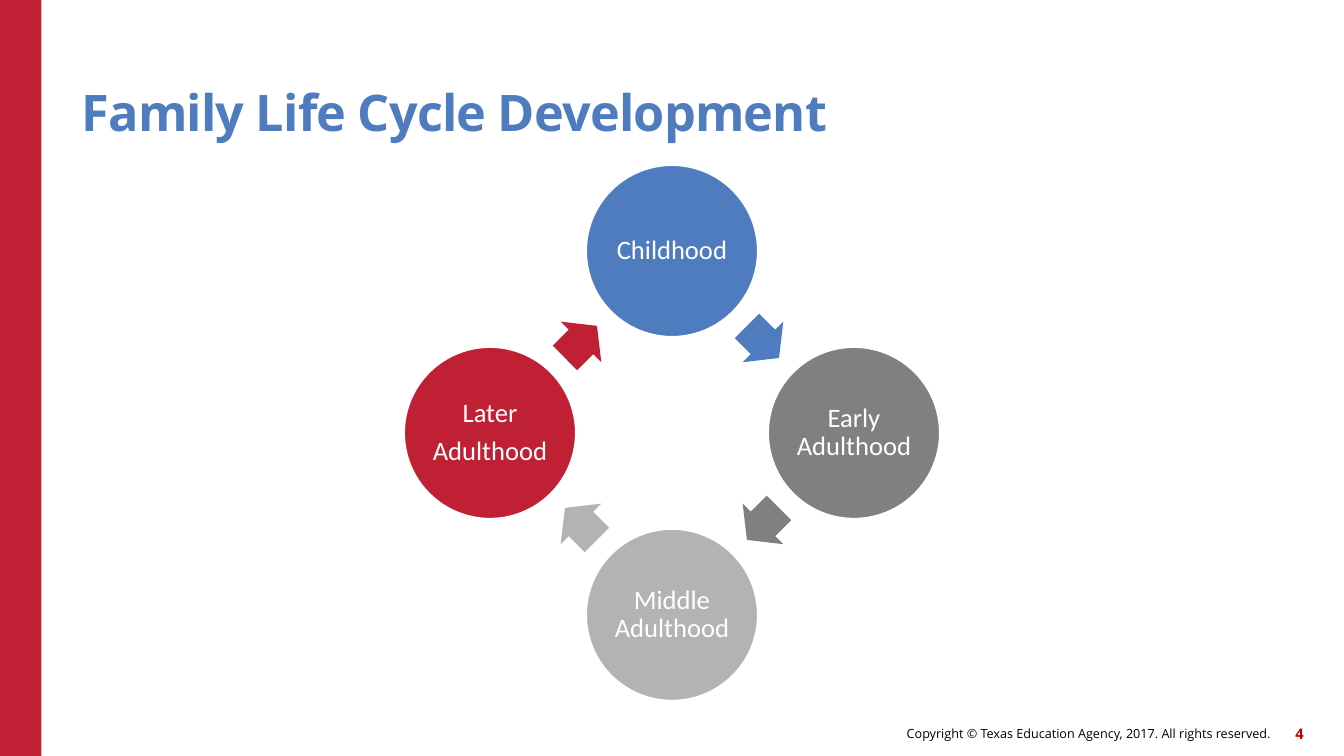
import math

import pptx
import pptx.dml.color
import pptx.enum.shapes
import pptx.enum.text
import pptx.util
from pptx.util import Inches

COLORS = {
    "red": "C02033",
    "blue": "4E7CBE",
    "gray": "808080",
    "silver": "B3B3B3",
    "white": "FFFFFF",
    "black": "000000",
    "number": "C00000",
}
STAGES = [
    ("Childhood", "blue"),
    ("Early Adulthood", "gray"),
    ("Middle Adulthood", "silver"),
    ("Later\nAdulthood", "red"),
]
ALIGN = pptx.enum.text.PP_ALIGN
ANCHOR = pptx.enum.text.MSO_ANCHOR
SHAPE = pptx.enum.shapes.MSO_SHAPE


def rgb(color):
    return pptx.dml.color.RGBColor.from_string(COLORS[color])


def write(shape, text, font_name, size, color, align, anchor, bold=False, inset=0):
    frame = shape.text_frame
    frame.word_wrap = True
    frame.vertical_anchor = anchor
    frame.margin_left = frame.margin_right = Inches(inset)
    frame.margin_top = frame.margin_bottom = Inches(inset)
    frame.text = text
    for paragraph in frame.paragraphs:
        paragraph.alignment = align
        for run in paragraph.runs:
            run.font.name = font_name
            run.font.size = pptx.util.Pt(size)
            run.font.bold = bold
            run.font.color.rgb = rgb(color)
    return frame.paragraphs


def add_filled(slide, kind, left, top, width, height, color):
    shape = slide.shapes.add_shape(
        kind, Inches(left), Inches(top), Inches(width), Inches(height))
    shape.shadow.inherit = False
    shape.fill.solid()
    shape.fill.fore_color.rgb = rgb(color)
    shape.line.fill.background()
    return shape


def add_label(slide, left, top, width, height):
    return slide.shapes.add_textbox(
        Inches(left), Inches(top), Inches(width), Inches(height))


def add_title(slide, left, top, width, height):
    title = add_label(slide, left, top, width, height)
    heading = write(title, "Family Life Cycle Development", "Open Sans", 36,
                    "blue", ALIGN.LEFT, ANCHOR.BOTTOM, bold=True)[0]
    heading.line_spacing = 0.9
    heading.runs[0]._r.get_or_add_rPr().set("spc", "-60")


def add_footer(slide, left, top, width, height):
    number_width, gap = 0.42, -0.09
    copyright_width = width - number_width - gap
    notice = add_label(slide, left, top, copyright_width, height)
    write(notice, "Copyright © Texas Education Agency, 2017. All rights reserved.",
          "Open Sans", 9, "black", ALIGN.RIGHT, ANCHOR.MIDDLE)
    number = add_label(slide, left + width - number_width, top, number_width, height)
    write(number, "4", "Open Sans", 10.5, "number", ALIGN.RIGHT, ANCHOR.MIDDLE, bold=True)


def add_cycle(slide, left, top, size):
    """Place the stages clockwise from the top, with an arrow after each."""
    diameter, arrow_width, arrow_height = 1.7, 0.45, 0.57
    center_x, center_y = left + size / 2, top + size / 2
    orbit = (size - diameter) / 2
    step = 360 / len(STAGES)
    arrow_orbit = orbit * math.cos(math.radians(step / 2))

    def corner(radius, angle, width, height):
        turn = math.radians(angle)
        return (center_x + radius * math.sin(turn) - width / 2,
                center_y - radius * math.cos(turn) - height / 2)

    for index, (name, color) in enumerate(STAGES):
        angle = index * step
        stage = add_filled(slide, SHAPE.OVAL, *corner(orbit, angle, diameter, diameter),
                           diameter, diameter, color)
        stage.line.color.rgb = rgb("white")
        stage.line.width = pptx.util.Pt(1)
        for paragraph in write(stage, name, "Calibri", 19, "white",
                               ALIGN.CENTER, ANCHOR.MIDDLE, inset=0.03):
            paragraph.line_spacing = 0.9
            paragraph.space_after = pptx.util.Pt(6.65)

        middle = angle + step / 2
        arrow = add_filled(slide, SHAPE.RIGHT_ARROW,
                           *corner(arrow_orbit, middle, arrow_width, arrow_height),
                           arrow_width, arrow_height, color)
        arrow.adjustments[0] = 0.6
        arrow.adjustments[1] = 0.5
        arrow.rotation = middle


def main():
    deck = pptx.Presentation()
    deck.slide_width = Inches(13.33)
    deck.slide_height = Inches(7.5)
    slide = deck.slides.add_slide(deck.slide_layouts[6])
    add_filled(slide, SHAPE.RECTANGLE, 0, 0, 0.41, 7.5, "red")
    add_footer(slide, 6.14, 7.12, 6.79, 0.32)
    add_title(slide, 0.81, 0.45, 11, 0.96)
    add_cycle(slide, 4.01, 1.64, 5.31)
    deck.save("out.pptx")


if __name__ == "__main__":
    main()
